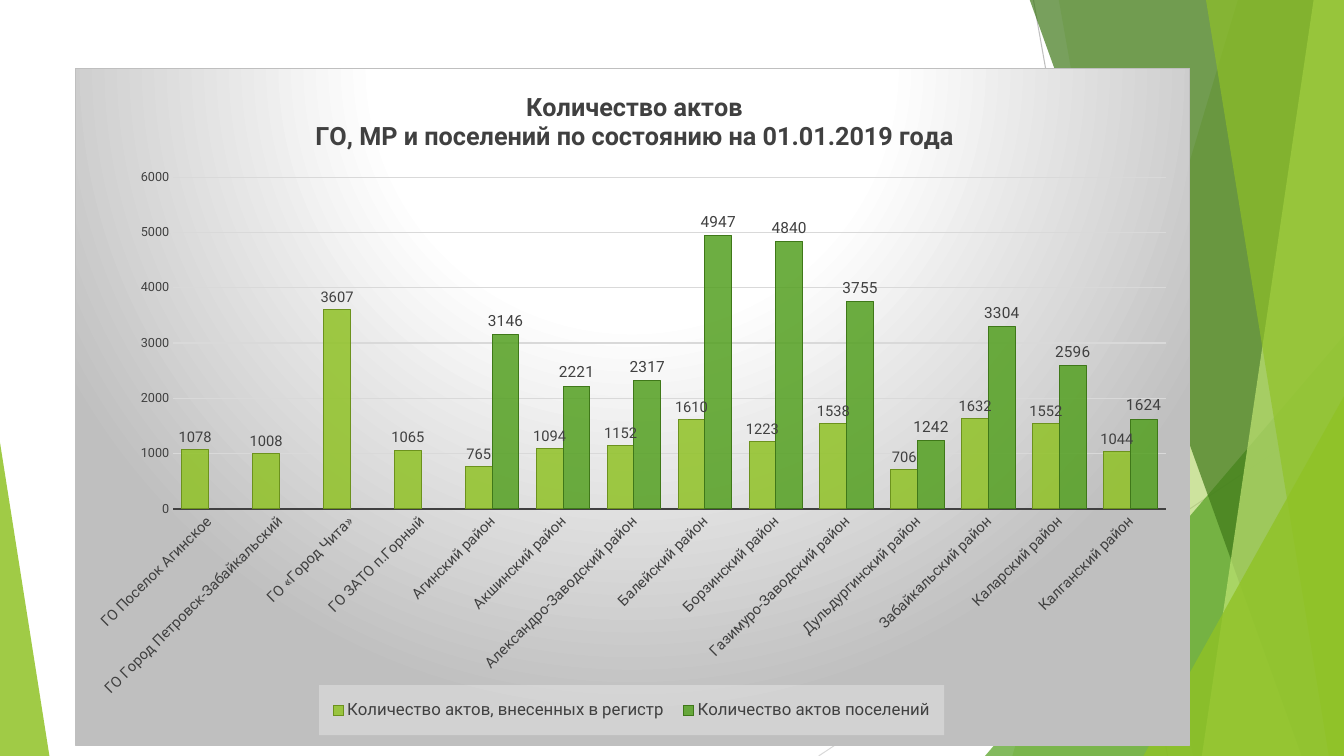
from lxml import etree
from pptx import Presentation
from pptx import util as u
from pptx.chart.data import CategoryChartData
from pptx.dml.color import RGBColor
from pptx.enum import chart as charts, shapes
from pptx.oxml import parse_xml
from pptx.oxml.ns import nsdecls, qn

COLOURS = {
    "lime": "90C226", "lime_edge": "6C921D", "pale": "C0E474",
    "green": "54A021", "dark_green": "3F7819",
    "ink": "404040", "silver": "BFBFBF", "grid": "D9D9D9",
    "white": "FFFFFF", "legend": "F2F2F2",
}

ACTS = [
    ("ГО Поселок Агинское", 1078, None),
    ("ГО Город Петровск-Забайкальский", 1008, None),
    ("ГО «Город Чита»", 3607, None),
    ("ГО ЗАТО п.Горный", 1065, None),
    ("Агинский район", 765, 3146),
    ("Акшинский район", 1094, 2221),
    ("Александро-Заводский район", 1152, 2317),
    ("Балейский район", 1610, 4947),
    ("Борзинский район", 1223, 4840),
    ("Газимуро-Заводский район", 1538, 3755),
    ("Дульдургинский район", 706, 1242),
    ("Забайкальский район", 1632, 3304),
    ("Каларский район", 1552, 2596),
    ("Калганский район", 1044, 1624),
]


class Deck:
    """Hold the style and the current slide, and draw each kind of element."""

    def __init__(self, font):
        self.font_name = font
        self.show = Presentation()
        self.show.slide_width = u.Inches(13.33)
        self.show.slide_height = u.Inches(7.5)
        self.slide = self.show.slides.add_slide(self.show.slide_layouts[6])

    def colour(self, name):
        return RGBColor.from_string(COLOURS[name])

    def type(self, font, size, bold=False):
        values = {"name": self.font_name, "size": u.Pt(size), "bold": bold}
        for key, value in values.items():
            setattr(font, key, value)
        font.color.rgb = self.colour("ink")

    def stroke(self, line, colour, width=0.75):
        line.color.rgb = self.colour(colour)
        line.width = u.Pt(width)

    def tint(self, fill, properties, colour, opacity):
        fill.solid()
        fill.fore_color.rgb = self.colour(colour)
        tone = properties.find(qn("a:solidFill")).find(qn("a:srgbClr"))
        etree.SubElement(tone, qn("a:alpha")).set("val", str(opacity * 1000))

    def line(self, start, end, colour):
        ray = self.slide.shapes.add_connector(
            shapes.MSO_CONNECTOR.STRAIGHT, *map(u.Inches, start + end))
        self.stroke(ray.line, colour)
        etree.SubElement(ray._element.spPr, qn("a:effectLst"))

    def finish(self, facet, colour, opacity):
        facet.shadow.inherit = False
        facet.line.fill.background()
        self.tint(facet.fill, facet._element.spPr, colour, opacity)

    def band(self, top_left, bottom_left, colour, opacity):
        corners = [(13.33, -0.01), (13.33, 7.5), (bottom_left, 7.5)]
        outline = self.slide.shapes.build_freeform(
            u.Inches(top_left), u.Inches(-0.01), scale=1.0)
        outline.add_line_segments(
            [(u.Inches(x), u.Inches(y)) for x, y in corners], close=True)
        self.finish(outline.convert_to_shape(), colour, opacity)

    def triangle(self, box, apex, colour, opacity):
        facet = self.slide.shapes.add_shape(
            shapes.MSO_SHAPE.ISOSCELES_TRIANGLE, *map(u.Inches, box))
        facet.adjustments[0] = apex
        self.finish(facet, colour, opacity)

    def place(self, part, after, **position):
        for old in part.findall(qn("c:layout")):
            part.remove(old)
        inner = '<c:layoutTarget val="inner"/>' if after is None else ""
        modes = "".join(f'<c:{axis}Mode val="edge"/>' for axis in "xy")
        values = "".join(
            f'<c:{key} val="{value}"/>' for key, value in position.items())
        index = 0 if after is None else part.index(part.find(qn(after))) + 1
        part.insert(index, parse_xml(
            f'<c:layout {nsdecls("c")}><c:manualLayout>{inner}{modes}{values}'
            '</c:manualLayout></c:layout>'))

    def backdrop(self, part, paint):
        part.find(qn("c:txPr")).addprevious(
            parse_xml(f'<c:spPr {nsdecls("c", "a")}>{paint}</c:spPr>'))

    def column_chart(self, box, title, names, rows):
        data = CategoryChartData()
        data.categories, *columns = zip(*rows)
        for name, values in zip(names, columns):
            data.add_series(name, values)
        chart = self.slide.shapes.add_chart(
            charts.XL_CHART_TYPE.COLUMN_CLUSTERED, *map(u.Inches, box),
            data).chart
        self.type(chart.font, 10)
        self.chart_title(chart, title)
        self.axes(chart)
        self.chart_legend(chart)
        plot = chart.plots[0]
        for key, value in {"gap_width": 65, "overlap": 0,
                           "vary_by_categories": False}.items():
            setattr(plot, key, value)
        looks = [("lime", "lime_edge", 10.5), ("green", "dark_green", 11)]
        for series, look in zip(plot.series, looks):
            self.columns(series, *look)
        self.place(chart._chartSpace.chart.plotArea, None,
                   x=0.088, y=0.161, w=0.891, h=0.49)
        stops = "".join(
            f'<a:gs pos="{pos}000"><a:srgbClr val="{COLOURS[name]}"/></a:gs>'
            for pos, name in [(0, "white"), (39, "white"), (100, "silver")])
        self.backdrop(
            chart._chartSpace,
            f'<a:gradFill><a:gsLst>{stops}</a:gsLst><a:path path="circle">'
            '<a:fillToRect l="50000" t="-80000" r="50000" b="180000"/>'
            '</a:path></a:gradFill><a:ln w="9525"><a:solidFill>'
            f'<a:srgbClr val="{COLOURS["silver"]}"/></a:solidFill></a:ln>')

    def chart_title(self, chart, title):
        chart.has_title = True
        heading = chart.chart_title
        heading.text_frame.text = title
        for paragraph in heading.text_frame.paragraphs:
            self.type(paragraph.runs[0].font, 18, True)
        heading.include_in_layout = False
        self.place(heading._element, "c:tx", x=0.213, y=0.03)

    def axes(self, chart):
        places, counts = chart.category_axis, chart.value_axis
        for axis, size in ((places, 10.5), (counts, 9)):
            axis.major_tick_mark = charts.XL_TICK_MARK.NONE
            self.type(axis.tick_labels.font, size)
        self.stroke(places.format.line, "ink", 1.5)
        turned = places._element.find(qn("c:txPr")).find(qn("a:bodyPr"))
        turned.set("rot", "-2700000")
        turned.set("vert", "horz")
        for key, value in {"minimum_scale": 0, "maximum_scale": 6000,
                           "major_unit": 1000}.items():
            setattr(counts, key, value)
        counts.format.line.fill.background()
        self.stroke(counts.major_gridlines.format.line, "grid")

    def chart_legend(self, chart):
        chart.has_legend = True
        legend = chart.legend
        legend.position = charts.XL_LEGEND_POSITION.BOTTOM
        legend.include_in_layout = False
        self.type(legend.font, 12)
        self.place(legend._element, "c:legendPos",
                   x=0.219, y=0.911, w=0.561, h=0.074)
        self.backdrop(
            legend._element,
            f'<a:solidFill><a:srgbClr val="{COLOURS["legend"]}">'
            '<a:alpha val="39000"/></a:srgbClr></a:solidFill>')

    def columns(self, series, colour, edge, size):
        look = series.format
        look.fill.solid()
        self.tint(look.fill, series._element.find(qn("c:spPr")), colour, 85)
        self.stroke(look.line, edge)
        labels = series.data_labels
        labels.show_value = True
        labels.position = charts.XL_LABEL_POSITION.OUTSIDE_END
        self.type(labels.font, size)


def main():
    deck = Deck("Roboto")
    deck.line((10.25, 0), (11.58, 7.5), "silver")
    deck.line((13.33, 4.03), (8.12, 7.5), "grid")
    deck.band(12.28, 10.04, "lime", 30)
    deck.band(10.5, 11.83, "lime", 20)
    deck.triangle((9.77, 3.33, 3.56, 4.17), 1, "green", 72)
    deck.band(10.21, 12.91, "dark_green", 70)
    deck.band(13.03, 11.92, "pale", 70)
    deck.band(11.96, 13.18, "lime", 65)
    deck.triangle((11.34, 3.93, 1.99, 3.57), 1, "lime", 80)
    deck.triangle((0, 4.39, 0.49, 3.11), 0, "lime", 85)
    deck.column_chart(
        (0.74, 0.67, 11.06, 6.73),
        "Количество актов\nГО, МР и поселений по состоянию на 01.01.2019 года",
        ["Количество актов, внесенных в регистр",
         "Количество актов поселений"], ACTS)
    deck.show.save("out.pptx")


if __name__ == "__main__":
    main()
